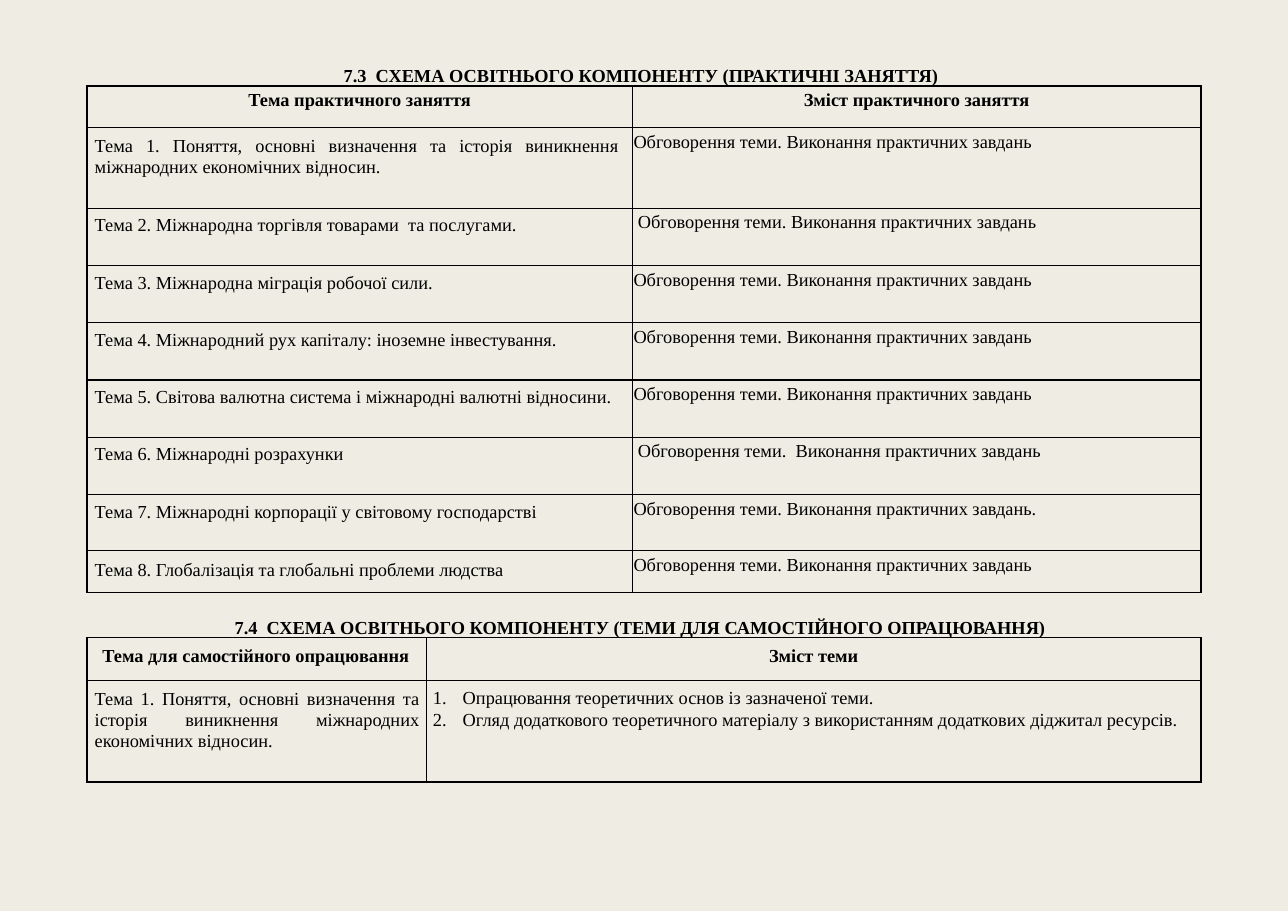
from lxml import etree
from pptx import Presentation
from pptx.dml.color import RGBColor
from pptx.enum.text import PP_ALIGN
from pptx.oxml.ns import qn
from pptx.util import Inches, Pt

CENTER, JUSTIFY, LEFT = PP_ALIGN.CENTER, PP_ALIGN.JUSTIFY, PP_ALIGN.LEFT
PAPER = RGBColor(0xEF, 0xED, 0xE3)
INK = RGBColor(0, 0, 0)
FONT, SIZE = "Times New Roman", Pt(12)

# Content
PRACTICE_TITLE = "7.3  СХЕМА ОСВІТНЬОГО КОМПОНЕНТУ (ПРАКТИЧНІ ЗАНЯТТЯ)"
PRACTICE_HEADER = ("Тема практичного заняття", "Зміст практичного заняття")
TASKS = "Обговорення теми. Виконання практичних завдань"
PRACTICE = [  # topic, content, content indent, row height, topic top margin
    ("Тема 1. Поняття, основні визначення та історія виникнення "
     "міжнародних економічних відносин.", TASKS, 0.01, 0.73, 0.07),
    ("Тема 2. Міжнародна торгівля товарами  та послугами.", TASKS, 0.05, 0.52, 0.06),
    ("Тема 3. Міжнародна міграція робочої сили.", TASKS, 0.01, 0.52, 0.06),
    ("Тема 4. Міжнародний рух капіталу: іноземне інвестування.", TASKS, 0.01, 0.52, 0.06),
    ("Тема 5. Світова валютна система і міжнародні валютні відносини.",
     TASKS, 0.01, 0.52, 0.06),
    ("Тема 6. Міжнародні розрахунки",
     "Обговорення теми.  Виконання практичних завдань", 0.05, 0.52, 0.06),
    ("Тема 7. Міжнародні корпорації у світовому господарстві",
     TASKS + ".", 0.01, 0.51, 0.06),
    ("Тема 8. Глобалізація та глобальні проблеми людства", TASKS, 0.01, 0.38, 0.08),
]
STUDY_TITLE = "7.4  СХЕМА ОСВІТНЬОГО КОМПОНЕНТУ (ТЕМИ ДЛЯ САМОСТІЙНОГО ОПРАЦЮВАННЯ)"
STUDY_HEADER = ("Тема для самостійного опрацювання", "Зміст теми")
STUDY_TOPIC = ("Тема 1. Поняття, основні визначення та історія виникнення "
               "міжнародних економічних відносин.")
STUDY_STEPS = [
    "Опрацювання теоретичних основ із зазначеної теми.",
    "Огляд додаткового теоретичного матеріалу з використанням додаткових діджитал ресурсів.",
]

# Layout, in inches
TABLE_LEFT = 0.79
PRACTICE_TOP, PRACTICE_COLS, PRACTICE_HEADER_H = 0.78, (4.95, 5.16), 0.38
STUDY_TOP, STUDY_COLS, STUDY_ROWS = 5.79, (3.08, 7.03), (0.39, 0.92)


def write(frame, lines, align=LEFT, bold=False, spacing=None):
    frame.text = "\n".join(lines)
    for paragraph in frame.paragraphs:
        paragraph.alignment = align
        if spacing:
            paragraph.line_spacing = Pt(spacing)
        for run in paragraph.runs:
            run.font.name, run.font.size, run.font.bold = FONT, SIZE, bold
            run.font.color.rgb = INK


def add_title(slide, text, left, top, width):
    frame = slide.shapes.add_textbox(
        Inches(left), Inches(top), Inches(width), Inches(0.23)).text_frame
    frame.word_wrap = True
    frame.margin_left = Inches(0.01)
    frame.margin_right = frame.margin_bottom = 0
    frame.margin_top = Inches(0.02)
    write(frame, [text], bold=True)


def add_grid(slide, top, cols, rows):
    table = slide.shapes.add_table(
        len(rows), len(cols), Inches(TABLE_LEFT), Inches(top),
        Inches(sum(cols)), Inches(sum(rows))).table
    table.first_row = table.horz_banding = False
    for column, width in zip(table.columns, cols):
        column.width = Inches(width)
    for row, height in zip(table.rows, rows):
        row.height = Inches(height)
    return table


def fill_cell(cell, lines, left=0, top=0.04, right=0, **style):
    cell.margin_left, cell.margin_top = Inches(left), Inches(top)
    cell.margin_right, cell.margin_bottom = Inches(right), 0
    write(cell.text_frame, lines, **style)
    # Borders come before the fill in the cell properties
    props = cell._tc.get_or_add_tcPr()
    for side in ("a:lnL", "a:lnR", "a:lnT", "a:lnB"):
        line = etree.SubElement(props, qn(side), w=str(Pt(1)))
        solid = etree.SubElement(line, qn("a:solidFill"))
        etree.SubElement(solid, qn("a:srgbClr"), val=str(INK))
    cell.fill.background()


def number(paragraph, indent, hanging):
    props = paragraph._p.get_or_add_pPr()
    props.set("marL", str(Inches(indent)))
    props.set("indent", str(-Inches(hanging)))
    etree.SubElement(props, qn("a:buFont"), typeface=FONT)
    etree.SubElement(props, qn("a:buAutoNum"), type="arabicPeriod")


def main():
    prs = Presentation()
    prs.slide_width, prs.slide_height = Inches(11.69), Inches(8.27)
    slide = prs.slides.add_slide(prs.slide_layouts[6])
    slide.background.fill.solid()
    slide.background.fill.fore_color.rgb = PAPER

    # Titles
    add_title(slide, PRACTICE_TITLE, 3.11, 0.56, 5.47)
    add_title(slide, STUDY_TITLE, 2.12, 5.57, 7.45)

    # Independent study
    study = add_grid(slide, STUDY_TOP, STUDY_COLS, STUDY_ROWS)
    fill_cell(study.cell(0, 0), [STUDY_HEADER[0]], left=0.14, top=0.08, bold=True)
    fill_cell(study.cell(0, 1), [STUDY_HEADER[1]], top=0.08, align=CENTER, bold=True)
    fill_cell(study.cell(1, 0), [STUDY_TOPIC], left=0.07, top=0.07, right=0.06,
              align=JUSTIFY, spacing=13.8)
    fill_cell(study.cell(1, 1), STUDY_STEPS, top=0.06, spacing=14.1)
    for step in study.cell(1, 1).text_frame.paragraphs:
        number(step, 0.33, 0.27)

    # Practical classes
    heights = [PRACTICE_HEADER_H] + [height for _, _, _, height, _ in PRACTICE]
    practice = add_grid(slide, PRACTICE_TOP, PRACTICE_COLS, heights)
    for col, heading in enumerate(PRACTICE_HEADER):
        fill_cell(practice.cell(0, col), [heading], align=CENTER, bold=True)
    for row, (topic, content, indent, _, topic_top) in enumerate(PRACTICE, 1):
        fill_cell(practice.cell(row, 0), [topic], left=0.07, top=topic_top,
                  right=0.12, align=JUSTIFY, spacing=13.8)
        fill_cell(practice.cell(row, 1), [content], left=indent)

    prs.save("out.pptx")


if __name__ == "__main__":
    main()
